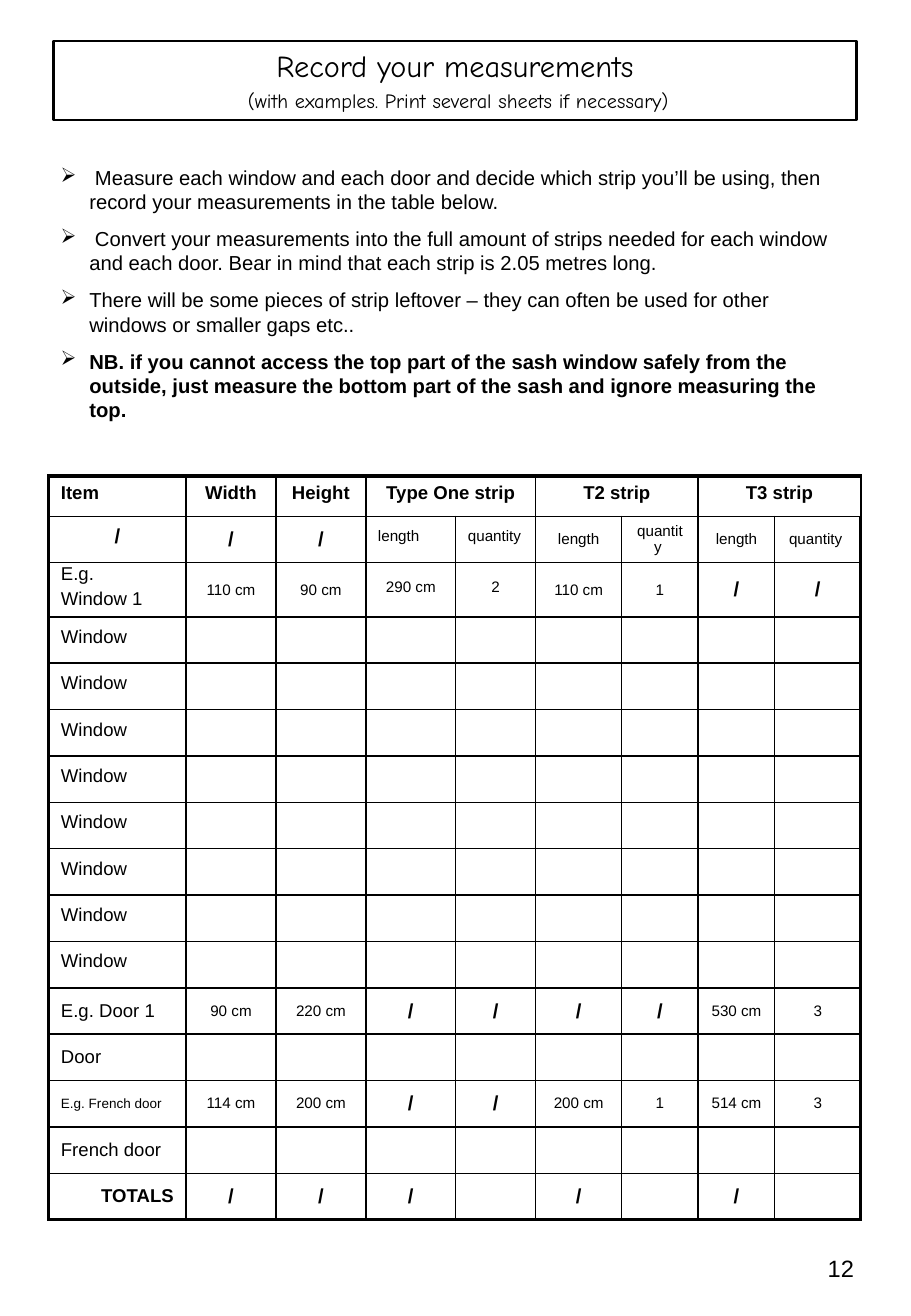
from lxml import etree
from pptx import Presentation
from pptx import util as u
from pptx.dml.color import RGBColor
from pptx.enum import shapes, text
from pptx.oxml import ns

BLACK = RGBColor(0, 0, 0)
BODY_FONT = "Arial"
TITLE_FONT = "Comic Neue"
LEFT, CENTER, RIGHT = text.PP_ALIGN.LEFT, text.PP_ALIGN.CENTER, text.PP_ALIGN.RIGHT
THIN, THICK = 1, 2.25

INSTRUCTIONS = [
    " Measure each window and each door and decide which strip you’ll be using, "
    "then record your measurements in the table below.",
    " Convert your measurements into the full amount of strips needed for each "
    "window and each door. Bear in mind that each strip is 2.05 metres long.",
    "There will be some pieces of strip leftover – they can often be used for "
    "other windows or smaller gaps etc..",
    "NB. if you cannot access the top part of the sash window safely from the "
    "outside, just measure the bottom part of the sash and ignore measuring the top.",
]
ROWS = [
    ["Item", "Width", "Height", "Type One strip", "", "T2 strip", "", "T3 strip", ""],
    ["/", "/", "/", "length", "quantity", "length", "quantity ", "length", "quantity "],
    ["E.g.\nWindow 1", "110 cm", "90 cm", "290 cm", "2", "110 cm", "1", "/", "/"],
    *[["Window"] + [""] * 8 for _ in range(8)],
    ["E.g. Door 1", "90 cm", "220 cm", "/", "/", "/", "/", "530 cm", "3"],
    ["Door"] + [""] * 8,
    ["E.g. French door", "114 cm", "200 cm", "/", "/", "200 cm", "1", "514 cm", "3"],
    ["French door"] + [""] * 8,
    ["TOTALS", "/", "/", "/", "", "/", "", "/", ""],
]
COL_WIDTHS = [2.87, 1.88, 1.88, 1.88, 1.67, 1.8, 1.6, 1.6, 1.8]
ROW_HEIGHTS = [0.84, 0.97, 1.12] + [0.97] * 13
LAST_ROW, LAST_COL = len(ROWS) - 1, len(COL_WIDTHS) - 1


def style_paragraph(p, size, font=BODY_FONT, bold=False, align=LEFT, before=0):
    p.alignment = align
    p.space_before = u.Pt(before)
    for r in p.runs:
        r.font.size = u.Pt(size)
        r.font.name = font
        r.font.bold = bold
        r.font.color.rgb = BLACK


def add_bullet(p):
    pPr = p._p.get_or_add_pPr()
    pPr.set("marL", str(u.Cm(0.6)))
    pPr.set("indent", str(u.Cm(-0.6)))
    color = etree.SubElement(pPr, ns.qn("a:buClr"))
    etree.SubElement(color, ns.qn("a:srgbClr"), val=str(BLACK))
    etree.SubElement(pPr, ns.qn("a:buChar"), char="➢")


def add_text(slide, left, top, width, height, content):
    sp = slide.shapes.add_textbox(u.Cm(left), u.Cm(top), u.Cm(width), u.Cm(height))
    tf = sp.text_frame
    tf.word_wrap = True
    tf.text = content
    return tf


def add_title(slide):
    sp = slide.shapes.add_shape(
        shapes.MSO_SHAPE.RECTANGLE, u.Cm(1.12), u.Cm(0.86), u.Cm(16.79), u.Cm(1.65))
    sp.shadow.inherit = False
    sp.fill.background()
    sp.line.color.rgb = BLACK
    sp.line.width = u.Pt(1.5)
    tf = sp.text_frame
    tf.word_wrap = True
    tf.vertical_anchor = text.MSO_ANCHOR.TOP
    tf.text = "Record your measurements\n (with examples. Print several sheets if necessary)"
    for p, size in zip(tf.paragraphs, (18, 12)):
        style_paragraph(p, size, TITLE_FONT, align=CENTER, before=3)


def add_instructions(slide):
    tf = add_text(slide, 1.02, 3.33, 16.79, 5.23, "\n".join(INSTRUCTIONS))
    for p in tf.paragraphs:
        style_paragraph(p, 12, bold=p.text.startswith("NB."), before=7.5)
        add_bullet(p)


def set_borders(cell, row, col):
    widths = {
        "a:lnL": THICK if col == 0 else THIN,
        "a:lnR": THICK if col == LAST_COL else THIN,
        "a:lnT": THICK if row == 0 else THIN,
        "a:lnB": THICK if row == LAST_ROW else THIN,
    }
    tcPr = cell._tc.get_or_add_tcPr()
    for tag, width in widths.items():
        ln = etree.SubElement(tcPr, ns.qn(tag), w=str(u.Pt(width)))
        fill = etree.SubElement(ln, ns.qn("a:solidFill"))
        etree.SubElement(fill, ns.qn("a:srgbClr"), val=str(BLACK))


def cell_size(content, col):
    if content == "/":
        return 12
    if content == "E.g. French door":
        return 8
    return 11 if col == 0 else 9


def cell_align(content, row, col):
    if content == "TOTALS":
        return RIGHT
    if content != "/" and (col == 0 or row == 1 and col in (3, 4)):
        return LEFT
    return CENTER


def fill_cell(cell, content, row, col):
    set_borders(cell, row, col)
    cell.fill.background()
    cell.vertical_anchor = text.MSO_ANCHOR.MIDDLE
    tight = row == 0 or (col == 0 and row <= 10) or (row in (1, 2) and col in (3, 4))
    cell.margin_top = u.Cm(0.03 if tight or not content else 0.13)
    cell.margin_bottom = u.Cm(0.13 if content else 0.03)
    if not content:
        return
    cell.text_frame.text = content
    heading = row == 0 or content == "TOTALS"
    spaced = (row == 0 or (col == 0 and row <= 12 and row != 11)
              or (row == 1 and content != "/"))
    for p in cell.text_frame.paragraphs:
        style_paragraph(
            p, 11 if heading else cell_size(content, col),
            bold=heading or content == "/",
            align=cell_align(content, row, col), before=3 if spaced else 0)
        if spaced:
            p.line_spacing = 0.93


def add_measurements(slide):
    frame = slide.shapes.add_table(
        len(ROWS), len(COL_WIDTHS), u.Cm(1.02), u.Cm(9.96),
        u.Cm(sum(COL_WIDTHS)), u.Cm(sum(ROW_HEIGHTS)))
    table = frame.table
    table.first_row = False
    table.horz_banding = False
    for column, width in zip(table.columns, COL_WIDTHS):
        column.width = u.Cm(width)
    for row, height in zip(table.rows, ROW_HEIGHTS):
        row.height = u.Cm(height)
    for row, contents in enumerate(ROWS):
        for col, content in enumerate(contents):
            fill_cell(table.cell(row, col), content, row, col)
    for col in (3, 5, 7):
        table.cell(0, col).merge(table.cell(0, col + 1))


def add_page_number(slide):
    tf = add_text(slide, 16.74, 26.11, 1.37, 0.91, "12")
    style_paragraph(tf.paragraphs[0], 14, align=RIGHT)


def main():
    prs = Presentation()
    prs.slide_width, prs.slide_height = u.Cm(19.05), u.Cm(27.53)
    slide = prs.slides.add_slide(prs.slide_layouts[6])
    add_instructions(slide)
    add_measurements(slide)
    add_title(slide)
    add_page_number(slide)
    prs.save("out.pptx")


if __name__ == "__main__":
    main()
